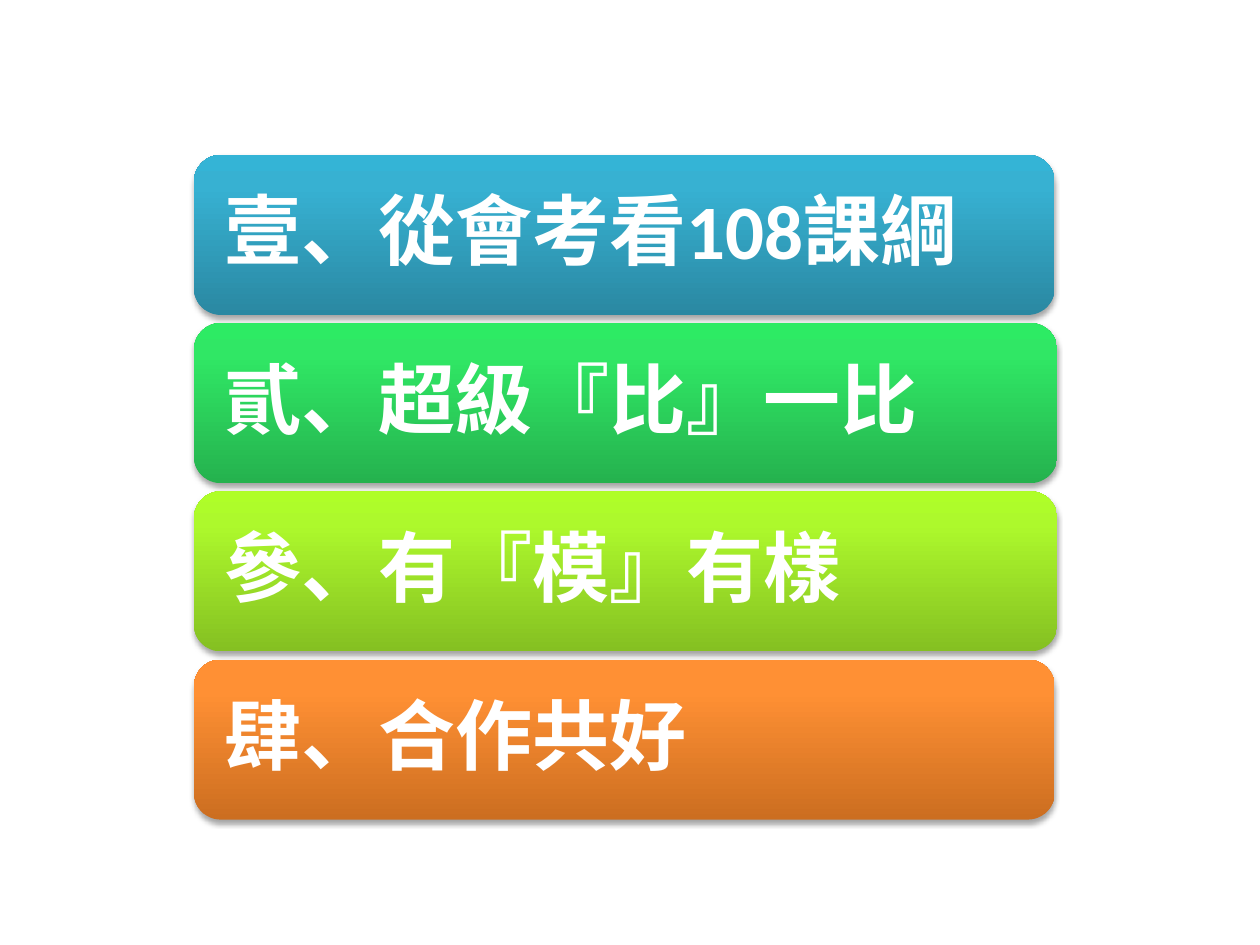
from lxml import etree
from pptx import Presentation
from pptx.dml.color import RGBColor
from pptx.enum.shapes import MSO_SHAPE
from pptx.enum.text import MSO_ANCHOR, PP_ALIGN
from pptx.oxml import parse_xml
from pptx.oxml.ns import qn
from pptx.util import Inches, Pt

COLORS = {
    "text": "FFFFFF",
    "shadow": "000000",
    "blue": ("2A88A2", "37B1D2", "34B4D6"),
    "green": ("25B24E", "30E765", "2DEB64"),
    "lime": ("85C022", "ADF92C", "AFFE28"),
    "orange": ("CC6E20", "FF9034", "FF9136"),
}
CHAPTERS = [
    ("壹、從會考看108課綱", "blue", 6.83),
    ("貳、超級『比』一比", "green", 6.85),
    ("參、有『模』有樣", "lime", 6.85),
    ("肆、合作共好", "orange", 6.83),
]
STOPS = (0, 80, 100)
LEFT, TOP, HEIGHT, PITCH = 1.54, 1.23, 1.27, 1.335
INSET = 0.06
NAMESPACE = "http://schemas.openxmlformats.org/drawingml/2006/main"


def fill_gradient(bar, colors):
    bar.fill.gradient()
    properties = bar._element.spPr
    stops = "".join(
        f'<a:gs pos="{stop * 1000}"><a:srgbClr val="{color}"/></a:gs>'
        for stop, color in zip(STOPS, colors)
    )
    gradient = parse_xml(
        f'<a:gradFill xmlns:a="{NAMESPACE}" rotWithShape="1">'
        f'<a:gsLst>{stops}</a:gsLst><a:lin ang="16200000" scaled="0"/></a:gradFill>'
    )
    properties.replace(properties.find(qn("a:gradFill")), gradient)


def add_shadow(bar):
    bar.shadow.inherit = False
    effects = bar._element.spPr.find(qn("a:effectLst"))
    shadow = etree.SubElement(
        effects, qn("a:outerShdw"), blurRad=str(Pt(3.1)), dist=str(Pt(1.8)),
        dir="5400000", rotWithShape="0",
    )
    color = etree.SubElement(shadow, qn("a:srgbClr"), val=COLORS["shadow"])
    etree.SubElement(color, qn("a:alpha"), val="35000")


def add_bar(page, top, width, colors):
    bar = page.shapes.add_shape(
        MSO_SHAPE.ROUNDED_RECTANGLE,
        Inches(LEFT), Inches(top), Inches(width), Inches(HEIGHT),
    )
    fill_gradient(bar, colors)
    bar.line.fill.background()
    add_shadow(bar)


def add_title(page, top, width, title):
    box = page.shapes.add_textbox(
        Inches(LEFT + INSET), Inches(top + INSET),
        Inches(width - 2 * INSET), Inches(HEIGHT - 2 * INSET),
    )
    frame = box.text_frame
    frame.text = title
    frame.word_wrap = True
    frame.vertical_anchor = MSO_ANCHOR.MIDDLE
    frame.margin_left = frame.margin_right = Inches(0.18)
    frame.margin_top = frame.margin_bottom = Inches(0.09)
    paragraph = frame.paragraphs[0]
    paragraph.alignment = PP_ALIGN.LEFT
    paragraph.line_spacing = 0.9
    font = paragraph.runs[0].font
    font.name = "Calibri"
    font.size = Pt(44)
    font.bold = True
    font.color.rgb = RGBColor.from_string(COLORS["text"])


def main():
    deck = Presentation()
    deck.slide_width, deck.slide_height = Inches(10), Inches(7.5)
    page = deck.slides.add_slide(deck.slide_layouts[6])
    for index, (title, color, width) in enumerate(CHAPTERS):
        top = TOP + index * PITCH
        add_bar(page, top, width, COLORS[color])
        add_title(page, top, width, title)
    deck.save("out.pptx")


if __name__ == "__main__":
    main()
